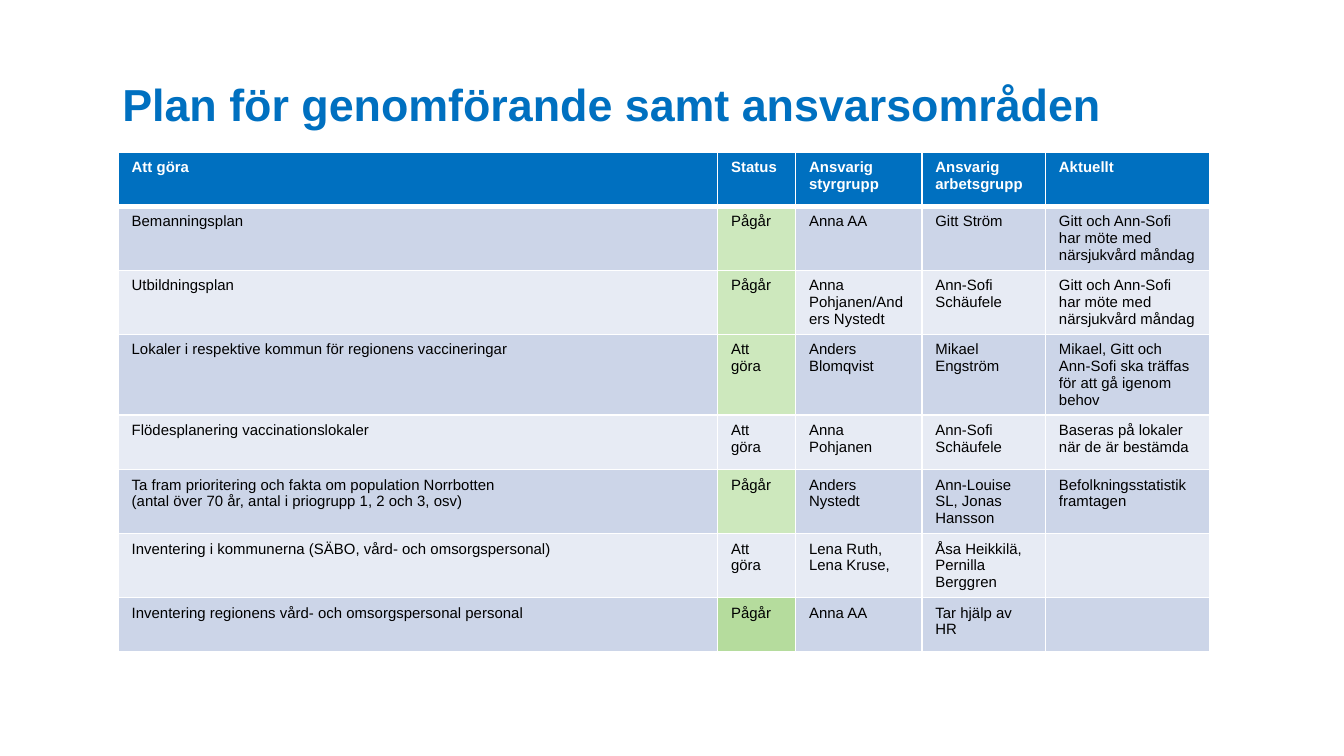
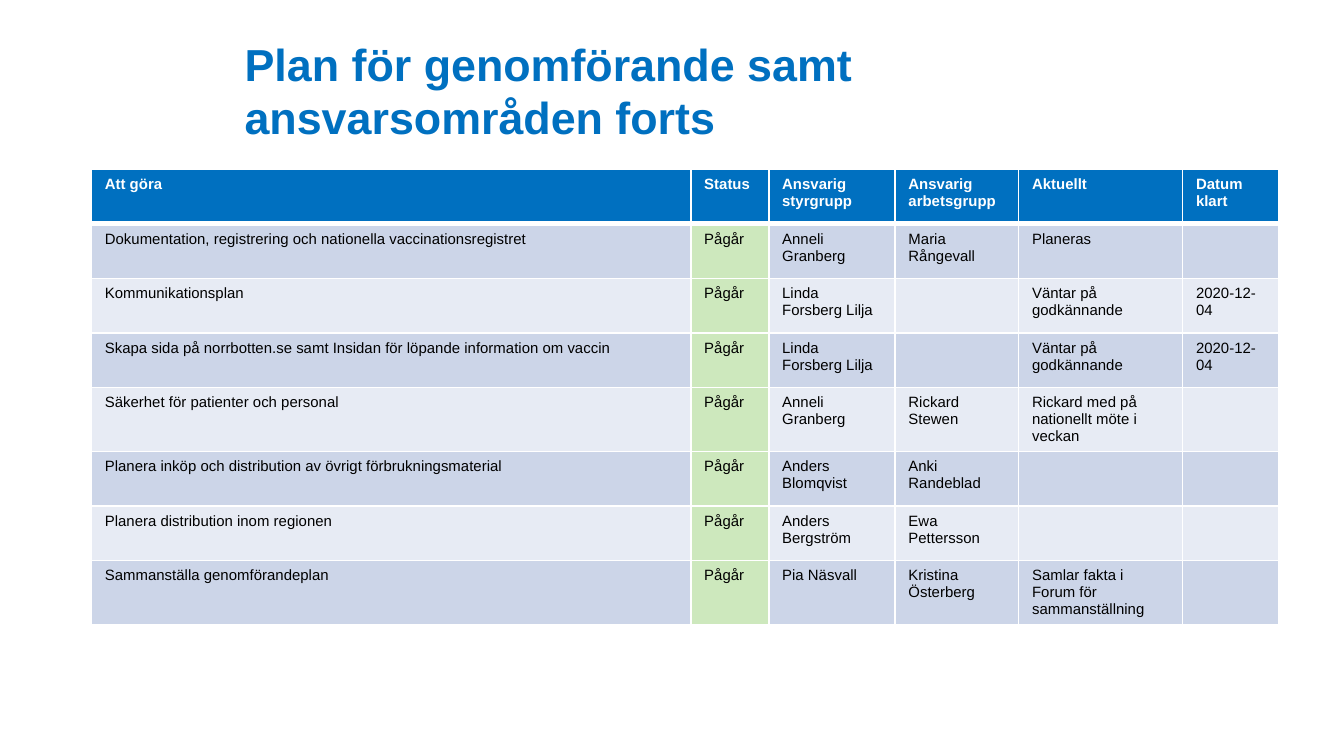
from dataclasses import dataclass

from lxml import etree
from pptx import Presentation
from pptx.dml.color import RGBColor
from pptx.enum.text import MSO_ANCHOR, MSO_AUTO_SIZE, PP_ALIGN
from pptx.oxml.ns import qn
from pptx.util import Inches, Pt

LEFT = PP_ALIGN.LEFT
BOTTOM = MSO_ANCHOR.BOTTOM
NO_AUTOFIT = MSO_AUTO_SIZE.NONE
TITLE_ONLY_LAYOUT = 5
SLIDE_WIDTH = Inches(10)
SLIDE_HEIGHT = SLIDE_WIDTH * 9 // 16


@dataclass(frozen=True)
class Theme:
    font: str = "Arial"
    title_size: int = 24
    table_size: int = 8
    blue: str = "0070C0"
    white: str = "FFFFFF"
    black: str = "000000"
    bands: tuple = ("CCD5E8", "E7EBF4")
    light_green: str = "CDE8BD"
    green: str = "B5DC9D"
    thin_border: int = 1
    header_border: int = 3


THEME = Theme()

HEADERS = ["Att göra", "Status", "Ansvarig styrgrupp", "Ansvarig arbetsgrupp", "Aktuellt", "Datum klart"]
COLUMN_WIDTHS = [4.46, 0.58, 0.94, 0.92, 1.22, 0.72]
TABLE_HEIGHT = 3.25
STATUS_COLUMN = 1

# status_fills holds one colour per task; None keeps the band colour of the row.
SLIDES = [
    {
        "title": "Plan för genomförande samt ansvarsområden",
        "title_box": (0.81, 0.11, 8.26, 0.91),
        "table_at": (0.88, 1.13),
        "status_fills": [THEME.light_green] * 3 + [None, THEME.light_green, None, THEME.green],
        "tasks": [
            ("Bemanningsplan", "Pågår", "Anna AA", "Gitt Ström",
             "Gitt och Ann-Sofi har möte med närsjukvård måndag"),
            ("Utbildningsplan", "Pågår", "Anna Pohjanen/Anders Nystedt", "Ann-Sofi Schäufele",
             "Gitt och Ann-Sofi har möte med närsjukvård måndag"),
            ("Lokaler i respektive kommun för regionens vaccineringar", "Att göra",
             "Anders Blomqvist", "Mikael Engström",
             "Mikael, Gitt och Ann-Sofi ska träffas för att gå igenom behov"),
            ("Flödesplanering vaccinationslokaler", "Att göra", "Anna Pohjanen",
             "Ann-Sofi Schäufele", "Baseras på lokaler när de är bestämda"),
            ("Ta fram prioritering och fakta om population Norrbotten\n"
             "(antal över 70 år, antal i priogrupp 1, 2 och 3, osv)", "Pågår",
             "Anders Nystedt", "Ann-Louise SL, Jonas Hansson", "Befolkningsstatistik framtagen"),
            ("Inventering i kommunerna (SÄBO, vård- och omsorgspersonal)", "Att göra",
             "Lena Ruth, Lena Kruse,", "Åsa Heikkilä, Pernilla Berggren", ""),
            ("Inventering regionens vård- och omsorgspersonal personal", "Pågår",
             "Anna AA", "Tar hjälp av HR", ""),
        ],
    },
    {
        "title": "Plan för genomförande samt ansvarsområden forts",
        "title_box": (1.72, 0.21, 6.54, 0.91),
        "table_at": (0.68, 1.26),
        "status_fills": [THEME.light_green] * 7,
        "tasks": [
            ("Dokumentation, registrering och nationella vaccinationsregistret", "Pågår",
             "Anneli Granberg", "Maria Rångevall", "Planeras", ""),
            ("Kommunikationsplan", "Pågår", "Linda Forsberg Lilja", "",
             "Väntar på godkännande", "2020-12-04"),
            ("Skapa sida på norrbotten.se samt Insidan för löpande information om vaccin",
             "Pågår", "Linda Forsberg Lilja", "", "Väntar på godkännande", "2020-12-04"),
            ("Säkerhet för patienter och personal", "Pågår", "Anneli Granberg",
             "Rickard Stewen", "Rickard med på nationellt möte i veckan", ""),
            ("Planera inköp och distribution av övrigt förbrukningsmaterial", "Pågår",
             "Anders Blomqvist", "Anki Randeblad", "", ""),
            ("Planera distribution inom regionen", "Pågår", "Anders Bergström",
             "Ewa Pettersson", "", ""),
            ("Sammanställa genomförandeplan", "Pågår", "Pia Näsvall", "Kristina Österberg",
             "Samlar fakta i Forum för sammanställning", ""),
        ],
    },
]


def add_run(paragraph, text, size, color, bold):
    run = paragraph.add_run()
    run.text = text
    run.font.name = THEME.font
    run.font.size = Pt(size)
    run.font.bold = bold
    run.font.color.rgb = RGBColor.from_string(color)


def set_borders(cell, top, bottom):
    """Draw white cell borders; top and bottom are widths in points."""
    properties = cell._tc.get_or_add_tcPr()
    widths = {"L": THEME.thin_border, "R": THEME.thin_border, "T": top, "B": bottom}
    for side, width in widths.items():
        line = etree.SubElement(properties, qn(f"a:ln{side}"), w=str(Pt(width)))
        fill = etree.SubElement(line, qn("a:solidFill"))
        etree.SubElement(fill, qn("a:srgbClr"), val=THEME.white)


def add_title(slide, text, box):
    title = slide.shapes.title
    title.left, title.top, title.width, title.height = map(Inches, box)
    frame = title.text_frame
    frame.word_wrap = True
    frame.auto_size = NO_AUTOFIT
    frame.vertical_anchor = BOTTOM
    paragraph = frame.paragraphs[0]
    paragraph.alignment = LEFT
    add_run(paragraph, text, THEME.title_size, THEME.blue, True)


def fill_cell(cell, text, row, fill):
    is_header = row == 0
    set_borders(
        cell,
        top=THEME.header_border if row == 1 else THEME.thin_border,
        bottom=THEME.header_border if is_header else THEME.thin_border,
    )
    cell.fill.solid()
    cell.fill.fore_color.rgb = RGBColor.from_string(fill)
    frame = cell.text_frame
    for index, line in enumerate(text.split("\n") if text else []):
        paragraph = frame.add_paragraph() if index else frame.paragraphs[0]
        add_run(paragraph, line, THEME.table_size, THEME.white if is_header else THEME.black, is_header)


def add_task_table(slide, tasks, status_fills, position):
    column_count = len(tasks[0])
    rows = [HEADERS[:column_count], *tasks]
    widths = COLUMN_WIDTHS[:column_count]
    left, top = position
    table = slide.shapes.add_table(
        len(rows), column_count, Inches(left), Inches(top),
        Inches(sum(widths)), Inches(TABLE_HEIGHT),
    ).table
    for column, width in zip(table.columns, widths):
        column.width = Inches(width)
    for row, texts in enumerate(rows):
        row_fill = THEME.bands[(row - 1) % 2] if row else THEME.blue
        for column, text in enumerate(texts):
            status_fill = status_fills[row - 1] if row and column == STATUS_COLUMN else None
            fill_cell(table.cell(row, column), text, row, status_fill or row_fill)


def main():
    presentation = Presentation()
    presentation.slide_width = SLIDE_WIDTH
    presentation.slide_height = SLIDE_HEIGHT
    layout = presentation.slide_layouts[TITLE_ONLY_LAYOUT]
    for content in SLIDES:
        slide = presentation.slides.add_slide(layout)
        add_title(slide, content["title"], content["title_box"])
        add_task_table(slide, content["tasks"], content["status_fills"], content["table_at"])
    presentation.save("out.pptx")


if __name__ == "__main__":
    main()
